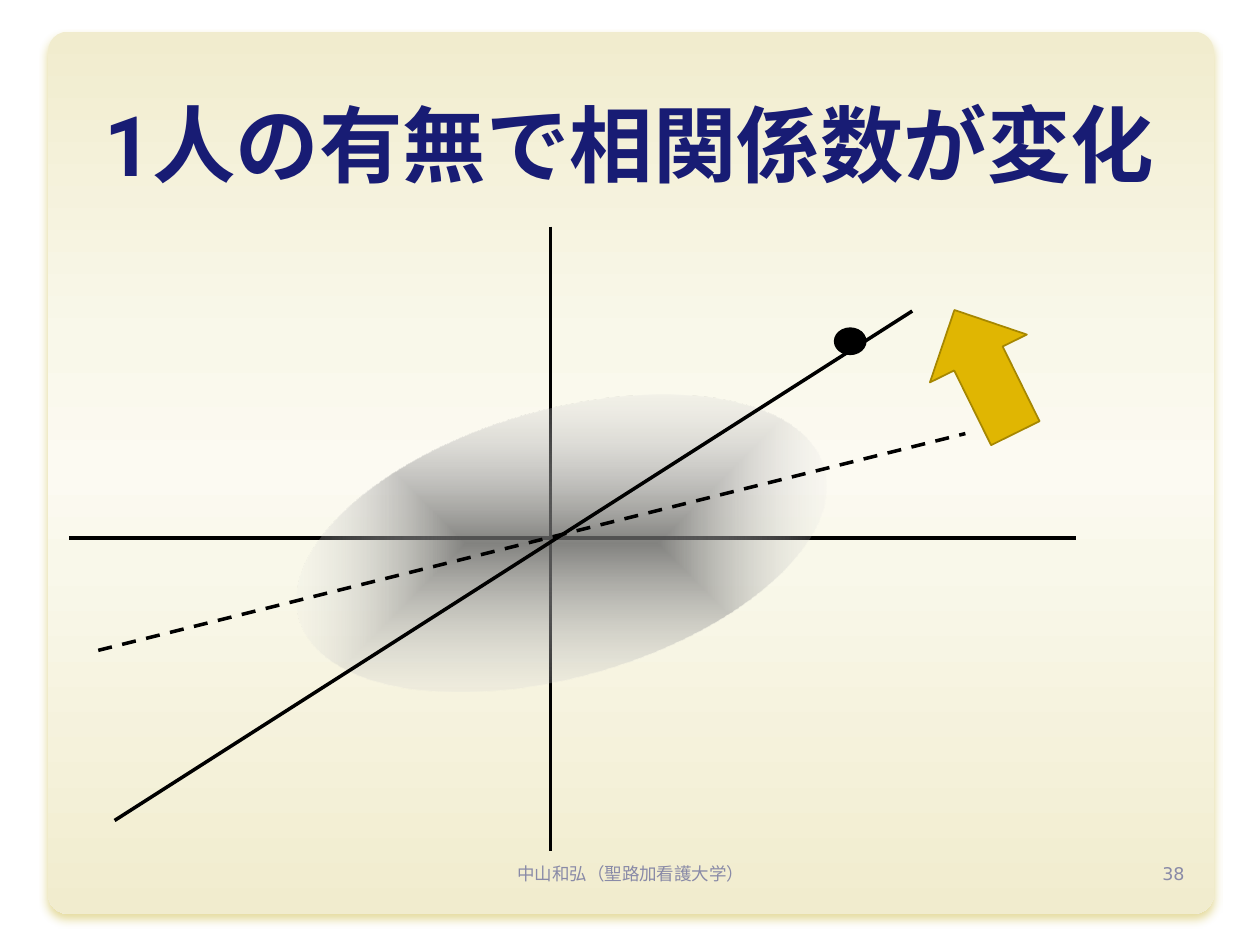
from pptx import Presentation
from pptx.dml.color import RGBColor
from pptx.enum import dml, shapes, text
from pptx.oxml import parse_xml
from pptx.oxml.ns import nsdecls, qn
from pptx.util import Cm, Pt

HEX = {
    "ink": "000000", "title": "181C74", "note": "898AA7",
    "arrow": "E0B602", "edge": "A68701", "glow": "C5AF25",
    "cream": "F1ECCE", "pale": "F9F8EA", "light": "FCFAF2",
    "gray": "666666", "white": "FFFFFF",
}
FORM = shapes.MSO_SHAPE
ALIGN = text.PP_ALIGN


def rgb(name):
    return RGBColor.from_string(HEX[name])


def shade(name, alpha):
    return f'<a:srgbClr val="{HEX[name]}"><a:alpha val="{alpha * 1000}"/></a:srgbClr>'


def write(frame, words, size, color, font, align, bold=False, anchor="TOP"):
    frame.word_wrap = True
    frame.auto_size = text.MSO_AUTO_SIZE.NONE
    frame.vertical_anchor = getattr(text.MSO_ANCHOR, anchor)
    para = frame.paragraphs[0]
    para.alignment = align
    run = para.add_run()
    run.text = words
    run.font.size, run.font.bold, run.font.name = Pt(size), bold, font
    run.font.color.rgb = rgb(color)
    east = parse_xml(f'<a:ea {nsdecls("a")} typeface="{font}"/>')
    run._r.get_or_add_rPr().find(qn("a:latin")).addnext(east)


class Deck:
    font = "DejaVu Sans"
    width = 2

    def __init__(self):
        self.file = Presentation()
        self.file.slide_width, self.file.slide_height = Cm(25.4), Cm(19.05)
        self.slide = self.file.slides.add_slide(self.file.slide_layouts[5])
        self.tree = self.slide.shapes

    def title(self, words, box):
        item = self.tree.title
        item.left, item.top, item.width, item.height = map(Cm, box)
        write(item.text_frame, words, 47.7, "title", "Roboto", ALIGN.CENTER,
              bold=True, anchor="BOTTOM")

    def label(self, words, box, align):
        item = self.tree.add_textbox(*map(Cm, box))
        write(item.text_frame, words, 10, "note", self.font, align)

    def shape(self, form, box, fill=None, line=None, turn=0):
        item = self.tree.add_shape(form, *map(Cm, box))
        item.shadow.inherit = False
        item.rotation = turn
        if fill:
            item.fill.solid()
            item.fill.fore_color.rgb = rgb(fill)
        else:
            item.fill.background()
        if line:
            item.line.color.rgb = rgb(line)
            item.line.width = Pt(1)
        else:
            item.line.fill.background()
        return item

    def blend(self, item, stops, way):
        """Fill with a gradient; stops are (place, colour, opacity)."""
        rows = "".join(f'<a:gs pos="{at * 1000}">{shade(name, alpha)}</a:gs>'
                       for at, name, alpha in stops)
        fill = parse_xml(f'<a:gradFill {nsdecls("a")} rotWithShape="1">'
                         f'<a:gsLst>{rows}</a:gsLst>{way}</a:gradFill>')
        props = item._element.spPr
        props.replace(props.find(qn("a:noFill")), fill)

    def panel(self, box):
        item = self.shape(FORM.ROUNDED_RECTANGLE, box)
        item.adjustments[0] = 0.022
        stops = [(0, "cream", 100), (35, "pale", 100), (50, "light", 100),
                 (60, "pale", 100), (100, "cream", 100)]
        self.blend(item, stops, '<a:lin ang="5400000" scaled="0"/>')
        glow = parse_xml(
            f'<a:outerShdw {nsdecls("a")} blurRad="{Pt(5)}" dist="{Pt(3.6)}" '
            f'dir="5400000" rotWithShape="0">{shade("glow", 45)}</a:outerShdw>')
        item._element.spPr.find(qn("a:effectLst")).append(glow)
        self.tree._spTree.insert(2, item._element)  # behind the title

    def cloud(self, box, turn):
        item = self.shape(FORM.OVAL, box, turn=turn)
        way = ('<a:path path="shape"><a:fillToRect l="50000" t="50000" '
               'r="50000" b="50000"/></a:path>')
        self.blend(item, [(0, "gray", 80), (100, "white", 0)], way)

    def line(self, start, end, dash=False):
        item = self.tree.add_connector(shapes.MSO_CONNECTOR.STRAIGHT,
                                       *map(Cm, start + end))
        item.line.color.rgb = rgb("ink")
        item.line.width = Pt(self.width)
        if dash:
            item.line.dash_style = dml.MSO_LINE.DASH
        item._element.spPr.append(parse_xml(f'<a:effectLst {nsdecls("a")}/>'))


def main():
    deck = Deck()
    deck.panel((0.97, 0.64, 23.5, 17.78))
    deck.title("1人の有無で相関係数が変化", (1.27, 0.84, 22.86, 3.18))

    # Axes, then the cloud of cases and the one outlier
    deck.line((11.1, 4.57), (11.1, 17.15))
    deck.line((1.4, 10.85), (21.69, 10.85))
    deck.cloud((5.82, 8.26, 11, 5.36), turn=344)
    deck.shape(FORM.OVAL, (16.81, 6.6, 0.66, 0.56), "ink")

    # Fit with the outlier, and without it
    deck.line((2.31, 16.54), (18.39, 6.27))
    deck.line((1.98, 13.11), (19.46, 8.74), dash=True)

    deck.label("中山和弘（聖路加看護大学）", (8.69, 17.27, 8.05, 1.02), ALIGN.CENTER)
    deck.label("38", (18.21, 17.27, 5.92, 1.02), ALIGN.RIGHT)
    deck.shape(FORM.RIGHT_ARROW, (18.47, 6.4, 2.77, 2.18), "arrow", "edge", 243.7)
    deck.file.save("out.pptx")


if __name__ == "__main__":
    main()
